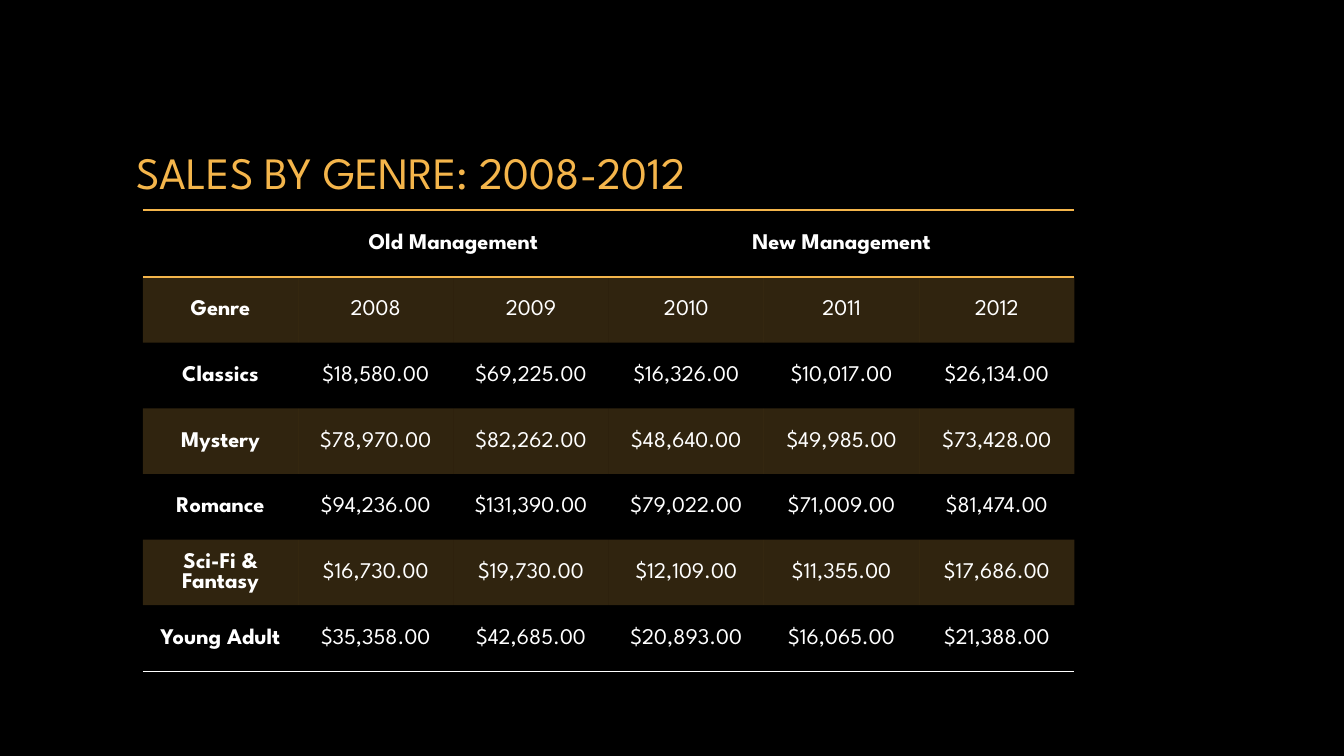
from lxml import etree
from pptx import Presentation
from pptx.dml.color import RGBColor
from pptx.enum.text import MSO_ANCHOR, MSO_AUTO_SIZE, PP_ALIGN
from pptx.oxml.ns import qn
from pptx.util import Cm, Pt

MIDDLE = MSO_ANCHOR.MIDDLE
NO_AUTOFIT = MSO_AUTO_SIZE.NONE
CENTER = PP_ALIGN.CENTER
LEFT = PP_ALIGN.LEFT

BLACK = RGBColor(0x00, 0x00, 0x00)
WHITE = RGBColor(0xFF, 0xFF, 0xFF)
GOLD = RGBColor(0xF4, 0xB5, 0x4B)

FONT = "League Spartan"
TITLE_ONLY_LAYOUT = 5
PLAIN_TABLE_STYLE = "{2D5ABB26-0587-4C30-8999-92F81FD0307C}"
BAND_ALPHA = 20

CELL_FORMAT = {
    "vertical_anchor": MIDDLE,
    "margin_left": Cm(0.03),
    "margin_right": Cm(0.03),
    "margin_top": Cm(0.03),
    "margin_bottom": 0,
}
TITLE_BOX = {"left": Cm(3.18), "top": Cm(1.69), "width": Cm(27.52), "height": Cm(5.29)}
TITLE_FRAME = {"vertical_anchor": MIDDLE, "word_wrap": True, "auto_size": NO_AUTOFIT}

TABLE_LEFT, TABLE_TOP = Cm(3.6), Cm(5.29)
TABLE_WIDTH, TABLE_HEIGHT = Cm(23.48), Cm(11.62)
HEADER_HEIGHT = Cm(1.69)

MANAGEMENT_SPANS = [(1, 2), (3, 5)]
SALES = [
    ["", "Old Management", "", "New Management", "", ""],
    ["Genre", "2008", "2009", "2010", "2011", "2012"],
    ["Classics", 18580, 69225, 16326, 10017, 26134],
    ["Mystery", 78970, 82262, 48640, 49985, 73428],
    ["Romance", 94236, 131390, 79022, 71009, 81474],
    ["Sci-Fi & Fantasy", 16730, 19730, 12109, 11355, 17686],
    ["Young Adult", 35358, 42685, 20893, 16065, 21388],
]


def set_attributes(target, values):
    for name, value in values.items():
        setattr(target, name, value)


def write_text(paragraph, text, size, color, alignment, bold=False):
    paragraph.alignment = alignment
    run = paragraph.add_run()
    run.text = text
    set_attributes(run.font, {"name": FONT, "size": Pt(size), "bold": bold})
    run.font.color.rgb = color


def add_border(cell, side, color, width):
    properties = cell._tc.get_or_add_tcPr()
    line = etree.SubElement(properties, qn(f"a:{side}"), w=str(Pt(width)))
    fill = etree.SubElement(line, qn("a:solidFill"))
    etree.SubElement(fill, qn("a:srgbClr"), val=str(color))


def fill_band(cell):
    cell.fill.solid()
    cell.fill.fore_color.rgb = GOLD
    color = cell._tc.tcPr.find(f"{qn('a:solidFill')}/{qn('a:srgbClr')}")
    etree.SubElement(color, qn("a:alpha"), val=str(BAND_ALPHA * 1000))


def format_cell(cell, row, column, value):
    set_attributes(cell, CELL_FORMAT)
    if value:
        text = value if isinstance(value, str) else f"${value:,.2f}"
        bold = row == 0 or column == 0
        write_text(cell.text_frame.paragraphs[0], text, 16, WHITE, CENTER, bold)
    if row == 0:
        add_border(cell, "lnT", GOLD, 1)
        add_border(cell, "lnB", GOLD, 1)
    elif row == len(SALES) - 1:
        add_border(cell, "lnB", WHITE, 0.5)
    if row % 2:
        fill_band(cell)
    else:
        cell.fill.background()


def add_sales_table(slide):
    row_count, column_count = len(SALES), len(SALES[0])
    frame = slide.shapes.add_table(
        row_count, column_count, TABLE_LEFT, TABLE_TOP, TABLE_WIDTH, TABLE_HEIGHT
    )
    table = frame.table
    set_attributes(table, {"first_row": False, "horz_banding": False})
    table._tbl.tblPr.find(qn("a:tableStyleId")).text = PLAIN_TABLE_STYLE
    for index, table_row in enumerate(table.rows):
        body_height = (TABLE_HEIGHT - HEADER_HEIGHT) // (row_count - 1)
        table_row.height = body_height if index else HEADER_HEIGHT
    for first, last in MANAGEMENT_SPANS:
        table.cell(0, first).merge(table.cell(0, last))
    for row, values in enumerate(SALES):
        for column, value in enumerate(values):
            format_cell(table.cell(row, column), row, column, value)
    return frame


def format_title(title, text):
    set_attributes(title, TITLE_BOX)
    set_attributes(title.text_frame, TITLE_FRAME)
    write_text(title.text_frame.paragraphs[0], text, 32, GOLD, LEFT)


def main():
    presentation = Presentation()
    presentation.slide_width = Cm(33.87)
    presentation.slide_height = Cm(19.05)
    slide = presentation.slides.add_slide(presentation.slide_layouts[TITLE_ONLY_LAYOUT])
    slide.background.fill.solid()
    slide.background.fill.fore_color.rgb = BLACK
    title = slide.shapes.title
    format_title(title, "SALES BY GENRE: 2008-2012")
    table_frame = add_sales_table(slide)
    table_frame.element.addnext(title.element)
    presentation.save("out.pptx")


if __name__ == "__main__":
    main()
